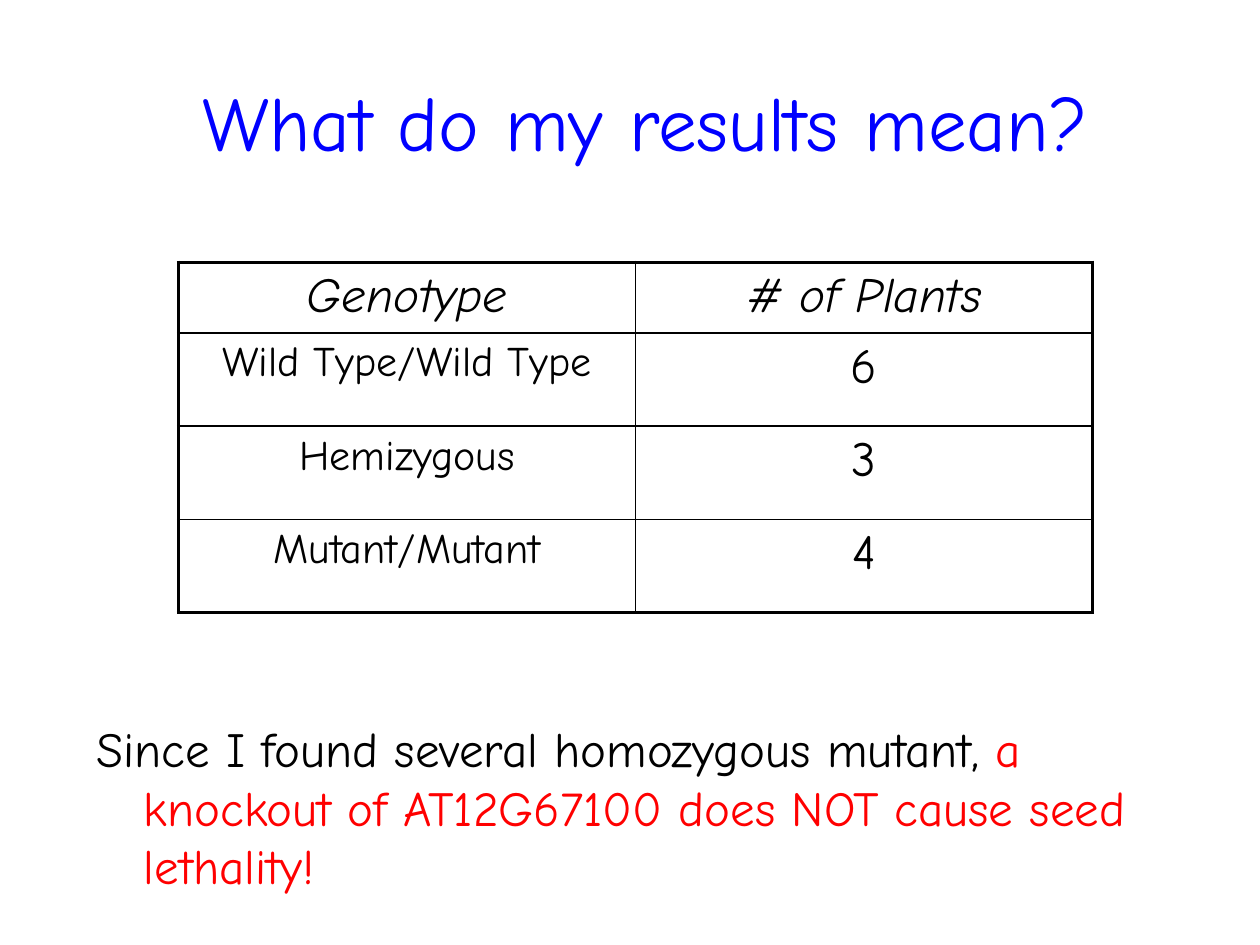
from lxml.etree import SubElement
from pptx import Presentation
from pptx.dml.color import RGBColor
from pptx.enum.text import MSO_ANCHOR, PP_ALIGN
from pptx.oxml.ns import qn
from pptx.util import Cm, Pt

COLOURS = {"title": "0000FF", "text": "000000", "accent": "FF0000", "border": "000000"}
RESULTS = [("Genotype", "# of Plants"), ("Wild Type/Wild Type", "6"),
           ("Hemizygous", "3"), ("Mutant/Mutant", "4")]


def add_text(para, text, size=28, colour="text", italic=False, font="Comic Neue"):
    span = para.add_run()
    span.text = text
    span.font.name = font
    span.font.size = Pt(size)
    span.font.italic = italic
    span.font.bold = False
    span.font.color.rgb = RGBColor.from_string(COLOURS[colour])


class ResultsPage:
    """Holds the deck's style and the page being built."""

    outer_line, inner_line = 2.25, 1

    def __init__(self, deck):
        self.page = deck.slides.add_slide(deck.slide_layouts[5])

    def title(self, text, left, top, width, height):
        box = self.page.shapes.title
        box.left, box.top, box.width, box.height = map(Cm, (left, top, width, height))
        box.text_frame.vertical_anchor = MSO_ANCHOR.MIDDLE
        para = box.text_frame.paragraphs[0]
        para.alignment = PP_ALIGN.CENTER
        add_text(para, text, size=44, colour="title")

    def table(self, rows, left, top, width, heights):
        frame = self.page.shapes.add_table(len(rows), len(rows[0]), Cm(left), Cm(top),
                                           Cm(width), Cm(sum(heights)))
        table = frame.table
        table.first_row = table.horz_banding = False
        last_row, last_column = len(rows) - 1, len(rows[0]) - 1
        for r, values in enumerate(rows):
            table.rows[r].height = Cm(heights[r])
            for c, value in enumerate(values):
                cell = table.cell(r, c)
                self.borders(cell, lnL=c == 0, lnR=c == last_column,
                             lnT=r == 0, lnB=r == last_row)
                cell.fill.background()
                para = cell.text_frame.paragraphs[0]
                para.alignment = PP_ALIGN.CENTER
                add_text(para, value, size=24 if r and c == 0 else 28, italic=r == 0)

    def borders(self, cell, **sides):
        properties = cell._tc.get_or_add_tcPr()
        for side, is_outer in sides.items():
            width = Pt(self.outer_line if is_outer else self.inner_line)
            line = SubElement(properties, qn(f"a:{side}"), w=str(width))
            fill = SubElement(line, qn("a:solidFill"))
            SubElement(fill, qn("a:srgbClr"), val=COLOURS["border"])

    def conclusion(self, parts, left, top, width, height, inset, hanging):
        box = self.page.shapes.add_textbox(*map(Cm, (left, top, width, height)))
        box.text_frame.word_wrap = True
        box.text_frame.margin_top = Cm(inset)
        para = box.text_frame.paragraphs[0]
        indent = para._p.get_or_add_pPr()
        indent.set("marL", str(Cm(hanging)))
        indent.set("indent", str(-Cm(hanging)))
        for text, colour in parts:
            add_text(para, text, colour=colour)


def main():
    deck = Presentation()
    deck.slide_width, deck.slide_height = Cm(25.4), Cm(19.05)
    results = ResultsPage(deck)
    results.title("What do my results mean?", 1.9, 0.85, 22.23, 3.18)
    results.table(RESULTS, 3.6, 5.29, 18.42, [1.42] + [1.88] * 3)
    results.conclusion([("Since I found several homozygous mutant, ", "text"),
                        ("a knockout of AT12G67100 does NOT cause seed lethality!", "accent")],
                       1.7, 12.91, 22.86, 4.87, inset=1.57, hanging=0.95)
    deck.save("out.pptx")


if __name__ == "__main__":
    main()
